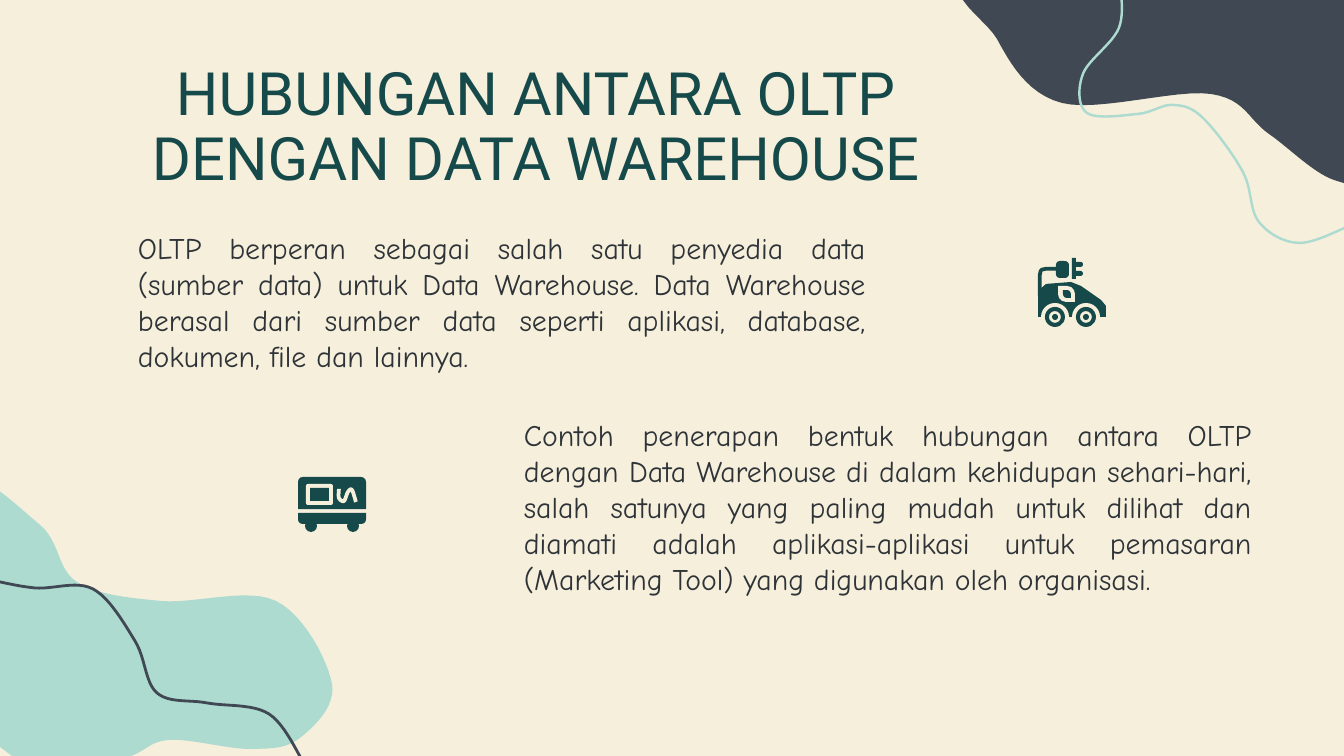
import pptx
import pptx.dml.color
import pptx.enum.shapes
import pptx.enum.text
import pptx.util

RGBColor = pptx.dml.color.RGBColor
MSO_SHAPE = pptx.enum.shapes.MSO_SHAPE
PP_ALIGN = pptx.enum.text.PP_ALIGN

EMU_PER_PX = 914400 / 134.4
CURVE_STEPS = 12

CREAM = RGBColor(0xF6, 0xEF, 0xDC)
SLATE = RGBColor(0x3F, 0x48, 0x53)
MINT = RGBColor(0xAD, 0xDB, 0xD0)
TEAL = RGBColor(0x16, 0x4A, 0x4A)
INK = RGBColor(0x2E, 0x33, 0x38)

# Points in px that each smooth curve runs through.
SLATE_BLOB = [(989, -30), (997, 39), (1062, 103), (1211, 94), (1269, 134),
              (1337, 181), (1400, 170), (1400, -30)]
MINT_BLOB = [(332, 684), (276, 601), (161, 601), (77, 582), (39, 524), (-54, 476),
             (-120, 620), (54, 784), (129, 757), (170, 740), (250, 749), (300, 738)]
SLATE_WAVE = [(305, 765), (269, 714), (207, 703), (157, 693), (135, 641), (93, 589),
              (35, 588), (-14, 579)]
MINT_WAVE = [(1356, 223), (1300, 243), (1259, 222), (1243, 172), (1203, 118), (1173, 105),
             (1138, 114), (1087, 113), (1083, 74), (1119, 28), (1120, -20)]
GENERATOR_CABLE = [(339, 489), (339, 498), (344, 501), (348, 492), (352, 490), (356, 502)]
CAR_CABLE = [(1040, 300), (1040, 274), (1045, 269), (1058, 269)]
CAR_BODY = [(1038, 317), (1038, 291), (1046, 284), (1071, 282), (1081, 286),
            (1101, 300), (1106, 306), (1106, 317)]


def px(length):
    return pptx.util.Emu(round(length * EMU_PER_PX))


def smooth(points, closed):
    """Return points along a Catmull-Rom curve through the given points."""
    if closed:
        guides = [points[-1], *points, *points[:2]]
    else:
        guides = [points[0], *points, points[-1]]
    curve = [points[0]]
    for window in zip(guides, guides[1:], guides[2:], guides[3:]):
        for step in range(1, CURVE_STEPS + 1):
            t = step / CURVE_STEPS
            curve.append(tuple(
                b + t * (c - a) / 2 + t ** 2 * (a - 2.5 * b + 2 * c - d / 2)
                + t ** 3 * (3 * b - a - 3 * c + d) / 2
                for a, b, c, d in zip(*window)))
    return curve


def build_outline(shapes, points, closed):
    corners = [(px(x), px(y)) for x, y in points]
    builder = shapes.build_freeform(*corners[0], scale=1.0)
    builder.add_line_segments(corners[1:], close=closed)
    shape = builder.convert_to_shape()
    shape.shadow.inherit = False
    return shape


def paint(shape, color):
    shape.shadow.inherit = False
    shape.fill.solid()
    shape.fill.fore_color.rgb = color
    shape.line.fill.background()


def add_blob(shapes, color, points):
    paint(build_outline(shapes, smooth(points, True), True), color)


def add_wave(shapes, color, points, width):
    shape = build_outline(shapes, smooth(points, False), False)
    shape.fill.background()
    shape.line.color.rgb = color
    shape.line.width = pptx.util.Pt(width)


def add_preset(shapes, kind, color, box, adjustments=()):
    shape = shapes.add_shape(kind, *map(px, box))
    paint(shape, color)
    for index, value in enumerate(adjustments):
        shape.adjustments[index] = value


def add_text(shapes, text, box, font, size, color, alignment, line_spacing=1.0):
    text_frame = shapes.add_textbox(*map(px, box)).text_frame
    text_frame.word_wrap = True
    text_frame.margin_left = text_frame.margin_right = 0
    text_frame.margin_top = text_frame.margin_bottom = 0
    text_frame.text = text
    paragraph = text_frame.paragraphs[0]
    paragraph.alignment = alignment
    paragraph.line_spacing = line_spacing
    paragraph.font.name = font
    paragraph.font.size = pptx.util.Pt(size)
    paragraph.font.color.rgb = color


def add_generator_icon(slide):
    shapes = slide.shapes.add_group_shape().shapes
    half_rounded = MSO_SHAPE.ROUND_2_SAME_RECTANGLE
    add_preset(shapes, half_rounded, TEAL, (298, 477, 68, 32), (0.15, 0))
    add_preset(shapes, MSO_SHAPE.ROUNDED_RECTANGLE, CREAM, (306, 484, 27, 21), (0.1,))
    add_preset(shapes, MSO_SHAPE.RECTANGLE, TEAL, (310, 488, 19, 13))
    add_wave(shapes, CREAM, GENERATOR_CABLE, 2)
    add_preset(shapes, half_rounded, TEAL, (298, 513, 68, 11), (0, 0.4))
    for left in (305, 347):
        add_preset(shapes, MSO_SHAPE.OVAL, TEAL, (left, 520, 12, 12))


def add_car_icon(slide):
    shapes = slide.shapes.add_group_shape().shapes
    add_wave(shapes, TEAL, CAR_CABLE, 2)
    add_preset(shapes, MSO_SHAPE.ROUNDED_RECTANGLE, TEAL, (1056, 261, 13, 17), (0.3,))
    add_preset(shapes, MSO_SHAPE.RECTANGLE, TEAL, (1072, 258, 4, 21))
    for top in (262, 271):
        add_preset(shapes, MSO_SHAPE.ROUNDED_RECTANGLE, TEAL, (1072, top, 11, 5), (0.5,))
    paint(build_outline(shapes, CAR_BODY, True), TEAL)
    leaf = MSO_SHAPE.ROUND_2_DIAG_RECTANGLE
    add_preset(shapes, leaf, CREAM, (1058, 286, 17, 16), (0, 0.5))
    add_preset(shapes, leaf, TEAL, (1063, 290, 8, 8), (0, 0.5))
    for center in (1055, 1086):
        for kind, color, radius in ((MSO_SHAPE.OVAL, CREAM, 14),
                                    (MSO_SHAPE.DONUT, TEAL, 10),
                                    (MSO_SHAPE.OVAL, TEAL, 3)):
            box = (center - radius, 317 - radius, 2 * radius, 2 * radius)
            add_preset(shapes, kind, color, box, (0.2,) if kind == MSO_SHAPE.DONUT else ())


def main():
    presentation = pptx.Presentation()
    presentation.slide_width, presentation.slide_height = px(1344), px(756)
    slide = presentation.slides.add_slide(presentation.slide_layouts[6])
    slide.background.fill.solid()
    slide.background.fill.fore_color.rgb = CREAM
    shapes = slide.shapes

    add_blob(shapes, SLATE, SLATE_BLOB)
    add_blob(shapes, MINT, MINT_BLOB)
    add_wave(shapes, SLATE, SLATE_WAVE, 1.5)
    add_wave(shapes, MINT, MINT_WAVE, 1.3)

    add_text(shapes, "HUBUNGAN ANTARA OLTP DENGAN DATA WAREHOUSE", (52, 64, 968, 132),
             "Roboto", 32, TEAL, PP_ALIGN.CENTER, 0.9)
    for text, box in (
        ("OLTP berperan sebagai salah satu penyedia data (sumber data) untuk Data Warehouse. "
         "Data Warehouse berasal dari sumber data seperti aplikasi, database, dokumen, file "
         "dan lainnya.", (138, 230, 728, 167)),
        ("Contoh penerapan bentuk hubungan antara OLTP dengan Data Warehouse di dalam "
         "kehidupan sehari-hari, salah satunya yang paling mudah untuk dilihat dan diamati "
         "adalah aplikasi-aplikasi untuk pemasaran (Marketing Tool) yang digunakan oleh "
         "organisasi.", (524, 417, 728, 230)),
    ):
        add_text(shapes, text, box, "Comic Neue", 16, INK, PP_ALIGN.JUSTIFY)

    add_generator_icon(slide)
    add_car_icon(slide)
    presentation.save("out.pptx")


if __name__ == "__main__":
    main()
